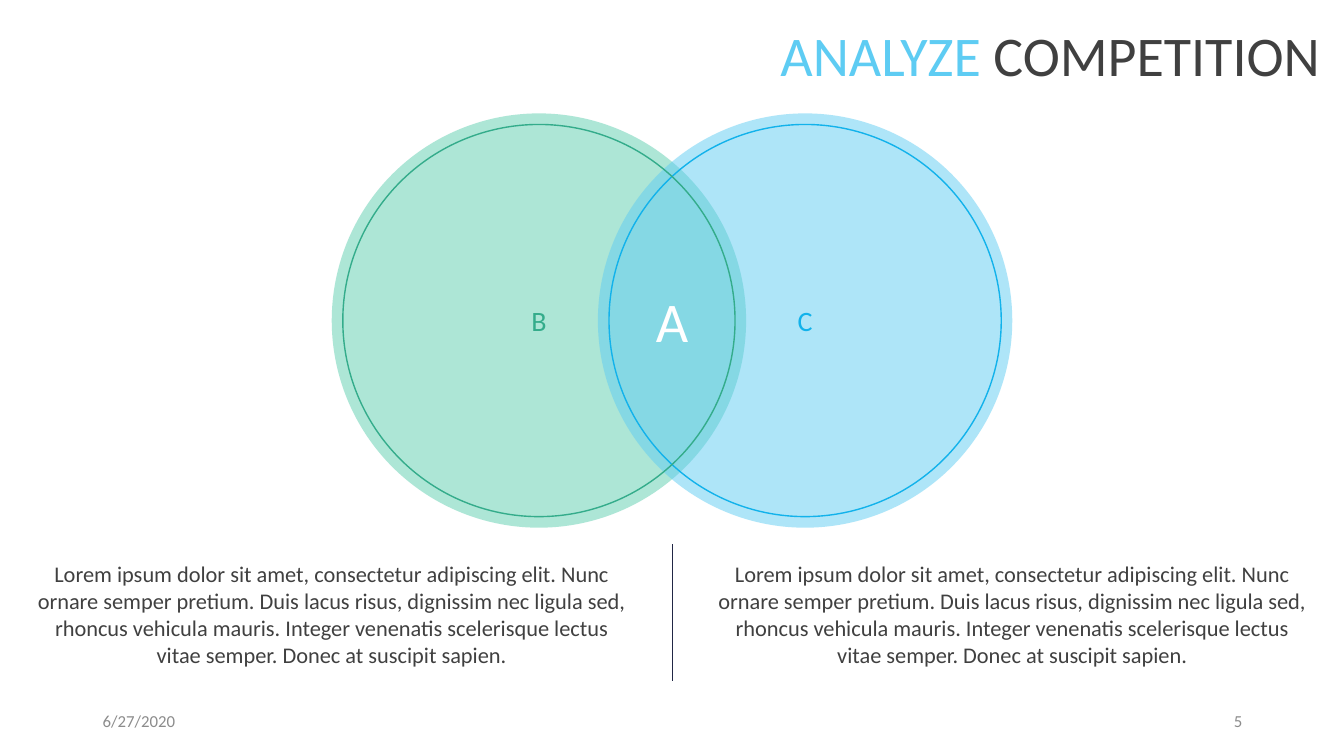
import pptx
import pptx.util
import pptx.dml.color
import pptx.enum.shapes
import pptx.enum.text
import pptx.oxml
import pptx.oxml.ns
from dataclasses import dataclass

Inches = pptx.util.Inches
Align = pptx.enum.text.PP_ALIGN


@dataclass(frozen=True)
class Theme:
    font: str = "Calibri"
    sky: str = "5ECCF3"
    sky_dark: str = "12B2EB"
    mint: str = "5DCEAF"
    mint_dark: str = "34AC8B"
    ink: str = "404040"
    gray: str = "8C8C8C"
    navy: str = "212745"
    white: str = "FFFFFF"
    heading: int = 40
    label: int = 20
    body: int = 16
    footer: int = 12


THEME = Theme()
TITLE = [("ANALYZE ", THEME.sky), ("COMPETITION", THEME.ink)]
CIRCLES = [("B", THEME.mint, THEME.mint_dark), ("C", THEME.sky, THEME.sky_dark)]
OVERLAP = "A"
LOREM = (
    "Lorem ipsum dolor sit amet, consectetur adipiscing elit. Nunc ornare semper "
    "pretium. Duis lacus risus, dignissim nec ligula sed, rhoncus vehicula mauris. "
    "Integer venenatis scelerisque lectus vitae semper. Donec at suscipit sapien."
)
DESCRIPTIONS = [LOREM, LOREM]
FOOTERS = [("6/27/2020", 0.92, Align.LEFT), ("5", 9.42, Align.RIGHT)]

WIDTH, HEIGHT = 13.33, 7.5
CENTER = WIDTH / 2
CIRCLE_MIDDLE = 3.18
CIRCLE_OFFSET = 1.32
DISC_SIZE, RING_SIZE = 4.11, 3.89
TEXT_WIDTH, TEXT_LEFT, TEXT_STEP = 5.84, 0.37, 6.75


def color(value):
    return pptx.dml.color.RGBColor.from_string(value)


def write(shape, spans, size, align, inset=0):
    frame = shape.text_frame
    settings = {
        "word_wrap": True,
        "auto_size": pptx.enum.text.MSO_AUTO_SIZE.NONE,
        "vertical_anchor": pptx.enum.text.MSO_ANCHOR.MIDDLE,
        "margin_left": Inches(inset),
        "margin_right": Inches(inset),
        "margin_top": Inches(inset / 2),
        "margin_bottom": Inches(inset / 2),
    }
    for name, value in settings.items():
        setattr(frame, name, value)
    para = frame.paragraphs[0]
    para.alignment = align
    for text, tone in spans:
        span = para.add_run()
        span.text = text
        for name, value in {"name": THEME.font, "size": pptx.util.Pt(size)}.items():
            setattr(span.font, name, value)
        span.font.color.rgb = color(tone)


def add_text(page, bounds, text, tone, size, align=Align.CENTER, inset=0):
    box = page.shapes.add_textbox(*map(Inches, bounds))
    write(box, [(text, tone)], size, align, inset)


def add_circle(page, middle_x, diameter):
    left, top = middle_x - diameter / 2, CIRCLE_MIDDLE - diameter / 2
    circle = page.shapes.add_shape(
        pptx.enum.shapes.MSO_SHAPE.OVAL, *map(Inches, (left, top, diameter, diameter))
    )
    circle.shadow.inherit = False
    return circle


def add_disc(page, middle_x, label, fill, tone):
    disc = add_circle(page, middle_x, DISC_SIZE)
    disc.fill.solid()
    disc.fill.fore_color.rgb = color(fill)
    disc.line.fill.background()
    swatch = disc.fill._xPr.find(".//" + pptx.oxml.ns.qn("a:srgbClr"))
    alpha = pptx.oxml.parse_xml(f'<a:alpha {pptx.oxml.ns.nsdecls("a")} val="50000"/>')
    swatch.append(alpha)
    write(disc, [(label, tone)], THEME.label, Align.CENTER, 0.1)


def add_ring(page, middle_x, tone):
    ring = add_circle(page, middle_x, RING_SIZE)
    ring.fill.background()
    ring.line.color.rgb = color(tone)
    ring.line.width = pptx.util.Pt(1)


def add_divider(page):
    divider = page.shapes.add_connector(
        pptx.enum.shapes.MSO_CONNECTOR.STRAIGHT,
        *map(Inches, (CENTER, 5.4, CENTER, 6.76)),
    )
    divider.line.color.rgb = color(THEME.navy)
    divider.line.width = pptx.util.Pt(0.5)
    no_shadow = pptx.oxml.parse_xml(f'<a:effectLst {pptx.oxml.ns.nsdecls("a")}/>')
    divider._element.spPr.append(no_shadow)


def main():
    deck = pptx.Presentation()
    deck.slide_width, deck.slide_height = Inches(WIDTH), Inches(HEIGHT)
    page = deck.slides.add_slide(deck.slide_layouts.get_by_name("Title Only"))

    title = page.shapes.title
    bounds = {"left": 0.25, "top": 0.2, "width": 12.84, "height": 0.67}
    for name, value in bounds.items():
        setattr(title, name, Inches(value))
    write(title, TITLE, THEME.heading, Align.RIGHT)

    for text, left, align in FOOTERS:
        add_text(page, (left, 6.95, 3, 0.4), text, THEME.gray, THEME.footer, align, 0.1)

    middles = [CENTER - CIRCLE_OFFSET, CENTER + CIRCLE_OFFSET]
    for middle_x, (label, fill, tone) in zip(middles, CIRCLES):
        add_disc(page, middle_x, label, fill, tone)
    for middle_x, (label, fill, tone) in reversed(list(zip(middles, CIRCLES))):
        add_ring(page, middle_x, tone)
    add_text(page, (6.33, 2.84, 0.67, 0.67), OVERLAP, THEME.white, THEME.heading)

    for column, text in enumerate(DESCRIPTIONS):
        left = TEXT_LEFT + column * TEXT_STEP
        add_text(page, (left, 5.55, TEXT_WIDTH, 1.08), text, THEME.ink, THEME.body)
    add_divider(page)

    deck.save("out.pptx")


if __name__ == "__main__":
    main()
